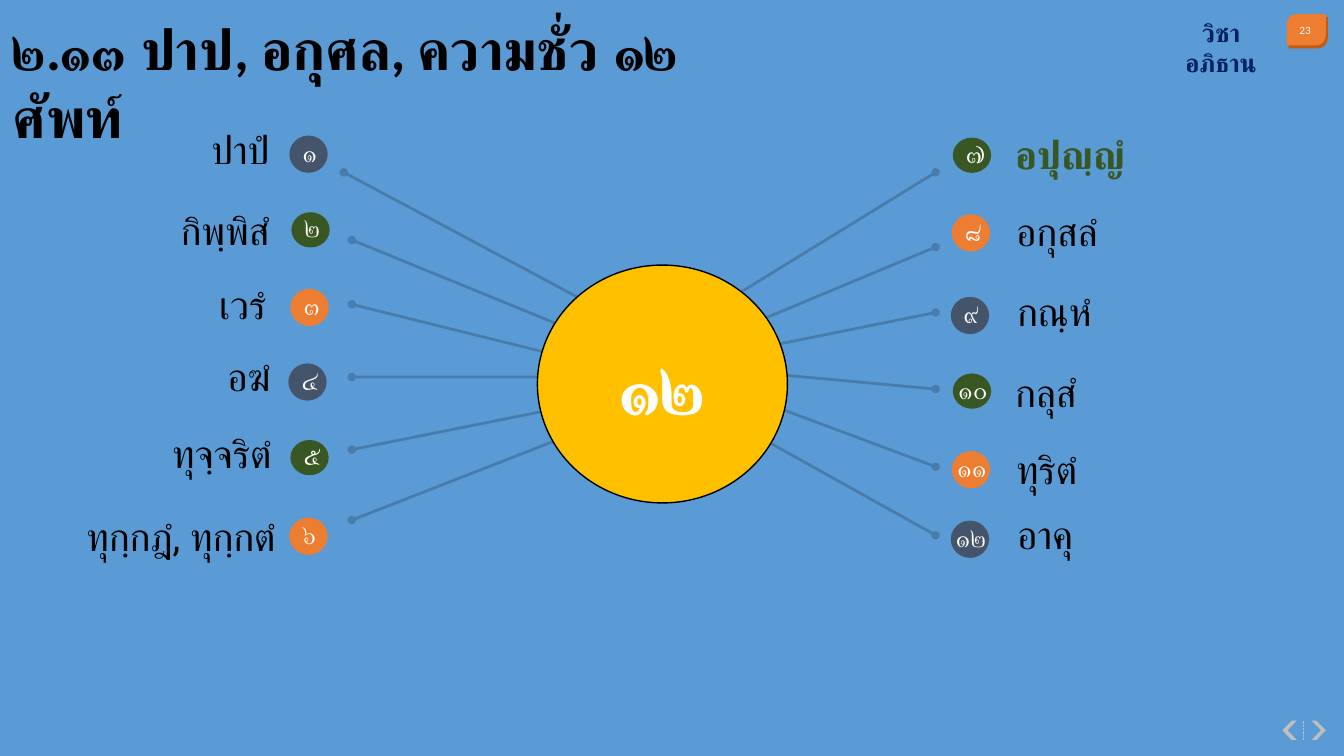
from lxml import etree
from pptx import Presentation
from pptx.dml.color import RGBColor
from pptx.enum.dml import MSO_LINE
from pptx.enum.shapes import MSO_CONNECTOR, MSO_SHAPE
from pptx.enum.text import MSO_ANCHOR, PP_ALIGN
from pptx.oxml.ns import qn
from pptx.util import Inches, Pt

OVAL, TAB, ARROW = MSO_SHAPE.OVAL, MSO_SHAPE.ROUND_2_DIAG_RECTANGLE, MSO_SHAPE.CHEVRON
STRAIGHT, DOTS = MSO_CONNECTOR.STRAIGHT, MSO_LINE.ROUND_DOT
TOP, MID = MSO_ANCHOR.TOP, MSO_ANCHOR.MIDDLE
LEFT, CENTER, RIGHT = PP_ALIGN.LEFT, PP_ALIGN.CENTER, PP_ALIGN.RIGHT

WIDE, HIGH = 13.33, 7.5
COLORS = {
    "sky": "5B9BD5", "slate": "44546A", "green": "385723", "orange": "ED7D31",
    "rust": "C55A11", "gold": "FFC000", "navy": "002060", "gray": "BFBFBF",
    "black": "000000", "white": "FFFFFF", "pale": "FEFEFE",
}
TITLE = "๒.๑๓ ปาป, อกุศล, ความชั่ว ๑๒ ศัพท์"
COURSE = "วิชาอภิธาน"
TOTAL = "๑๒"
PAGE = "23"

# numeral, word, colour, dot left, dot middle, word edge, word top, word width
WORDS = [
    ("๑", "ปาปํ", "slate", 2.87, 1.53, 2.77, 1.19, 1.38),
    ("๒", "กิพฺพิสํ", "green", 2.89, 2.28, 2.77, 2.0, 1.69),
    ("๓", "เวรํ", "orange", 2.88, 3.05, 2.74, 2.73, 1.8),
    ("๔", "อฆํ", "slate", 2.86, 3.79, 2.78, 3.45, 0.94),
    ("๕", "ทุจฺจริตํ", "green", 2.88, 4.54, 2.79, 4.21, 1.8),
    ("๖", "ทุกฺกฎํ, ทุกฺกตํ", "orange", 2.87, 5.32, 2.83, 5.03, 2.18),
    ("๗", "อปุญฺญํ", "green", 9.45, 1.54, 9.97, 1.24, 1.38),
    ("๘", "อกุสลํ", "orange", 9.44, 2.31, 9.98, 2.01, 1.59),
    ("๙", "กณฺหํ", "slate", 9.43, 3.13, 9.99, 2.8, 0.94),
    ("๑๐", "กลุสํ", "green", 9.45, 3.88, 9.97, 3.6, 0.94),
    ("๑๑", "ทุริตํ", "orange", 9.44, 4.66, 9.98, 4.37, 1.99),
    ("๑๒", "อาคุ", "slate", 9.43, 5.35, 9.99, 5.01, 1.7),
]
# outer end, inner end
RAYS = [
    (3.41, 1.71, 5.92, 3.05), (3.49, 2.38, 5.59, 3.24), (3.49, 3.02, 5.59, 3.54),
    (3.49, 3.74, 5.51, 3.74), (3.49, 4.46, 5.59, 4.04), (3.49, 5.16, 5.59, 4.34),
    (9.28, 1.71, 7.28, 2.94), (9.28, 2.45, 7.39, 3.24), (9.28, 3.1, 7.54, 3.45),
    (9.28, 3.86, 7.54, 3.7), (9.28, 4.63, 7.54, 3.98), (9.28, 5.31, 7.54, 4.34),
]
DOT, ROW, HALF = 0.38, 0.57, 6

deck = Presentation()
deck.slide_width, deck.slide_height = Inches(WIDE), Inches(HIGH)
slide = deck.slides.add_slide(deck.slide_layouts[6])
slide.background.fill.solid()
slide.background.fill.fore_color.rgb = RGBColor.from_string(COLORS["sky"])


def shade(name):
    return RGBColor.from_string(COLORS[name])


def shape(kind, box, color, adjust=(), turn=0):
    item = slide.shapes.add_shape(kind, *map(Inches, box))
    item.shadow.inherit = False
    item.fill.solid()
    item.fill.fore_color.rgb = shade(color)
    item.line.fill.background()
    for i, value in enumerate(adjust):
        item.adjustments[i] = value
    item.rotation = turn
    return item


def write(frame, words, size, font, color, align=LEFT, anchor=TOP, bold=False):
    frame.word_wrap = True
    frame.vertical_anchor = anchor
    para = frame.paragraphs[0]
    para.alignment = align
    run = para.add_run()
    run.text = words
    run.font.size, run.font.name, run.font.bold = Pt(size), font, bold
    run.font.color.rgb = shade(color)


def text(box, *style, **more):
    item = slide.shapes.add_textbox(*map(Inches, box))
    write(item.text_frame, *style, **more)


def line(ends, color, width):
    item = slide.shapes.add_connector(STRAIGHT, *map(Inches, ends))
    item.line.color.rgb = shade(color)
    item.line.width = Pt(width)
    etree.SubElement(item._element.spPr, qn("a:effectLst"))
    return item


def ray(ends):
    item = line(ends, "black", 2)
    ln = item.line._get_or_add_ln()
    tint = ln.find(".//" + qn("a:srgbClr"))
    etree.SubElement(tint, qn("a:alpha"), val="20000")
    etree.SubElement(ln, qn("a:headEnd"), type="oval")


def entry(i, num, word, color, x, mid, edge, top, width):
    left = i < HALF
    tall = 0.35 if color == "green" else 0.37
    shape(OVAL, (x, mid - tall / 2, DOT, tall), color)
    span = 0.34 if i < 8 else 0.7
    text((x + DOT / 2 - span / 2 + 0.01, mid - ROW / 2 - 0.03, span, ROW),
         num, 20, "Montserrat", "pale", CENTER, MID)
    key = num == "๗"
    text((edge - width if left else edge, top, width, ROW), word, 28, "Roboto",
         "green" if key else "black", RIGHT if left else LEFT, bold=key)


for x, y, color in ((12.78, 0.17, "rust"), (12.76, 0.14, "orange")):
    shape(TAB, (x, y, 0.39, 0.31), color, (0.323, 0))
text((12.71, 0.19, 0.47, 0.21), PAGE, 8, "Calibri", "pale", CENTER, MID)
for x, bend, turn in ((13.01, 0.663, 0), (12.72, 0.64, 180)):
    shape(ARROW, (x, 7.15, 0.14, 0.19), "gray", (bend,), turn)
line((12.93, 7.34, 12.93, 7.15), "gray", 0.5).line.dash_style = DOTS

text((0.03, 0.1, 7.16, 0.77), TITLE, 40, "Calibri", "black", bold=True)
text((11.62, 0.12, 0.98, 0.4), COURSE, 18, "Roboto", "navy", CENTER, bold=True)
for ends in RAYS:
    ray(ends)
for i, row in enumerate(WORDS):
    entry(i, *row)

hub = shape(OVAL, (5.33, 2.63, 2.48, 2.36), "gold")
hub.line.color.rgb = shade("black")
hub.line.width = Pt(1)
frame = hub.text_frame
frame.margin_left = frame.margin_right = frame.margin_top = frame.margin_bottom = 0
write(frame, TOTAL, 54, "Roboto", "white", CENTER, MID, True)

deck.save("out.pptx")
